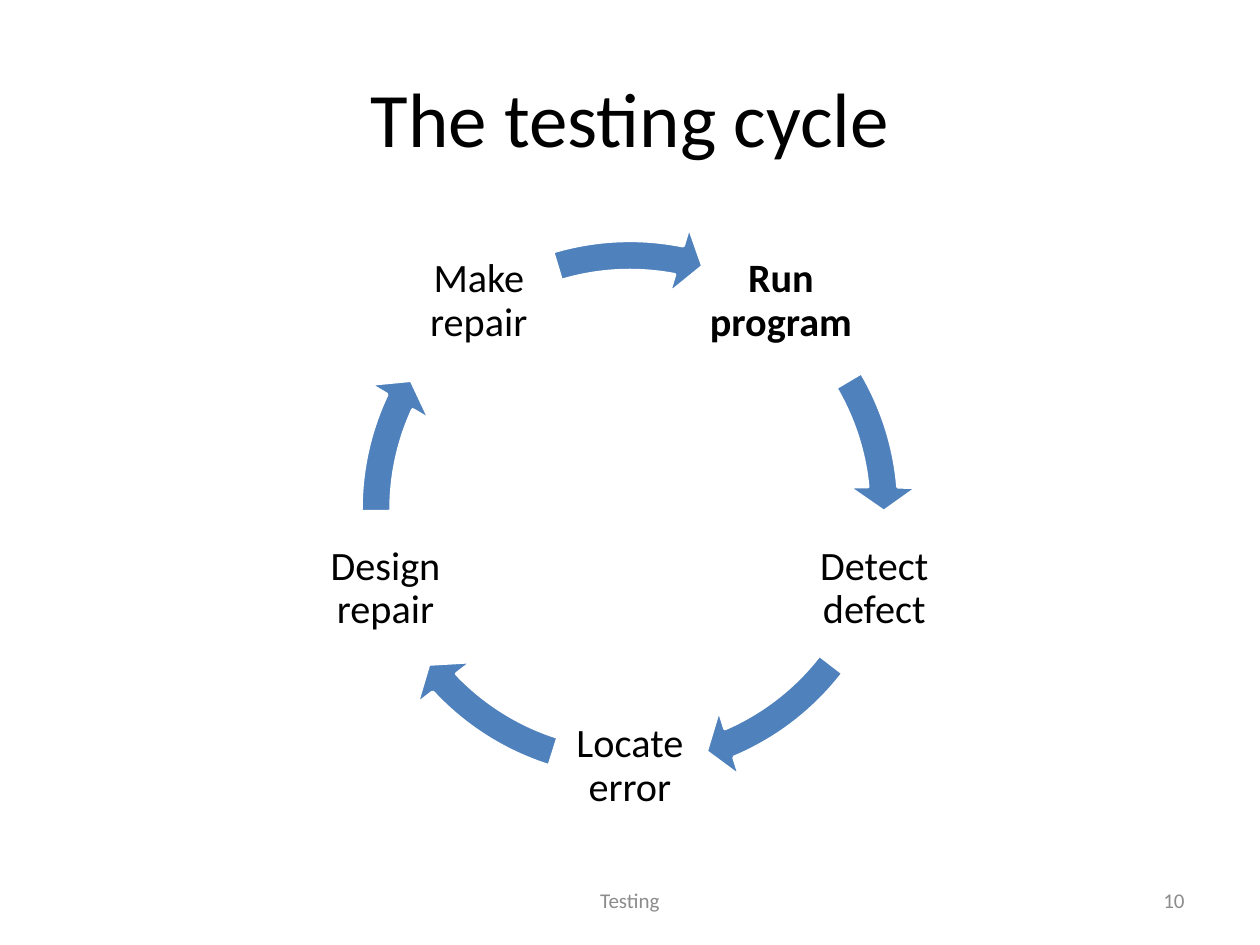
import math
from dataclasses import dataclass

from pptx import Presentation
from pptx import util as u
from pptx.dml.color import RGBColor
from pptx.enum import shapes, text


@dataclass(frozen=True)
class Theme:
    font: str = "Calibri"
    ink: str = "000000"
    muted: str = "8C8C8C"
    arrow: str = "4F81BD"
    outline: str = "FFFFFF"
    title: float = 44
    label: float = 23
    footer: float = 12


THEME = Theme()
CENTER_X, CENTER_Y = 12.7, 10.27
LABEL_RADIUS, LABEL_SIZE, RING_SIZE = 5.18, 3.1, 11.66
FIRST_ANGLE = -54
STEPS = [
    ("Run program", 329.42, 354.9),
    ("Detect defect", 37.55, 66.93),
    ("Locate error", 107.48, 136.86),
    ("Design repair", 179.5, 204.98),
    ("Make repair", 253.3, 281.11),
]


def write(tf, content, size, color, align, bold=False):
    tf.word_wrap = True
    tf.vertical_anchor = text.MSO_ANCHOR.MIDDLE
    p = tf.paragraphs[0]
    p.text = content
    p.alignment = align
    p.font.name = THEME.font
    p.font.size = u.Pt(size)
    p.font.bold = bold
    p.font.color.rgb = RGBColor.from_string(color)
    return p


def add_title(s, content):
    sp = s.shapes.title
    sp.left, sp.top = u.Cm(1.27), u.Cm(0.76)
    sp.width, sp.height = u.Cm(22.86), u.Cm(3.18)
    write(sp.text_frame, content, THEME.title, THEME.ink, text.PP_ALIGN.CENTER)


def add_label(group, content, angle, bold):
    x = CENTER_X + LABEL_RADIUS * math.cos(math.radians(angle)) - LABEL_SIZE / 2
    y = CENTER_Y + LABEL_RADIUS * math.sin(math.radians(angle)) - LABEL_SIZE / 2
    sp = group.shapes.add_textbox(u.Cm(x), u.Cm(y), u.Cm(LABEL_SIZE), u.Cm(LABEL_SIZE))
    tf = sp.text_frame
    tf.margin_left = tf.margin_right = tf.margin_top = tf.margin_bottom = u.Cm(0.08)
    p = write(tf, content, THEME.label, THEME.ink, text.PP_ALIGN.CENTER, bold)
    p.line_spacing = 0.9


def add_arrow(group, start, end):
    sp = group.shapes.add_shape(
        shapes.MSO_SHAPE.CIRCULAR_ARROW,
        u.Cm(CENTER_X - RING_SIZE / 2), u.Cm(CENTER_Y - RING_SIZE / 2),
        u.Cm(RING_SIZE), u.Cm(RING_SIZE))
    for i, value in enumerate((0.052, 5.6 * 0.6, end * 0.6, start * 0.6, 0.061)):
        sp.adjustments[i] = value
    sp.shadow.inherit = False
    sp.fill.solid()
    sp.fill.fore_color.rgb = RGBColor.from_string(THEME.arrow)
    sp.line.color.rgb = RGBColor.from_string(THEME.outline)
    sp.line.width = u.Pt(2)


def add_cycle(s):
    group = s.shapes.add_group_shape()
    for i, (label, start, end) in enumerate(STEPS):
        add_label(group, label, FIRST_ANGLE + i * 360 / len(STEPS), bold=i == 0)
        add_arrow(group, start, end)


def add_footer(s, content, left, width, align):
    sp = s.shapes.add_textbox(u.Cm(left), u.Cm(17.65), u.Cm(width), u.Cm(1.01))
    write(sp.text_frame, content, THEME.footer, THEME.muted, align)


def main():
    prs = Presentation()
    prs.slide_width, prs.slide_height = u.Cm(25.4), u.Cm(19.05)
    s = prs.slides.add_slide(prs.slide_layouts[5])
    add_title(s, "The testing cycle")
    add_cycle(s)
    add_footer(s, "10", 18.2, 5.93, text.PP_ALIGN.RIGHT)
    add_footer(s, "Testing", 8.68, 8.04, text.PP_ALIGN.CENTER)
    prs.save("out.pptx")


if __name__ == "__main__":
    main()
